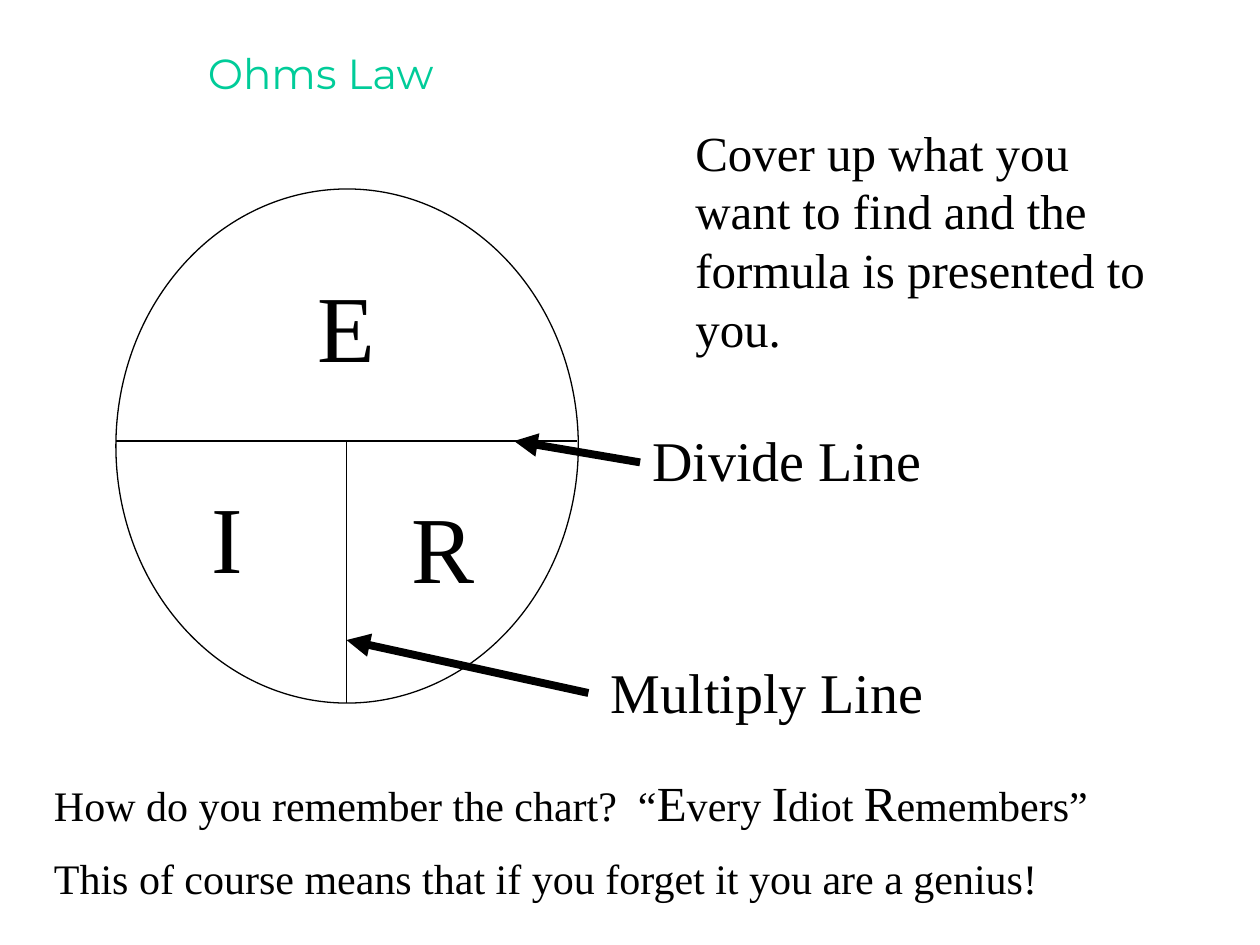
from lxml.etree import SubElement
from pptx import Presentation
from pptx.dml.color import RGBColor
from pptx.enum.shapes import MSO_CONNECTOR, MSO_SHAPE
from pptx.enum.text import MSO_AUTO_SIZE, PP_ALIGN
from pptx.oxml.ns import qn
from pptx.util import Inches, Pt

BLACK = RGBColor(0x00, 0x00, 0x00)
GREEN = RGBColor(0x00, 0xCC, 0x99)
BODY_FONT = "Times New Roman"
TITLE_FONT = "Montserrat"


def add_span(para, text, size, font=BODY_FONT, color=BLACK):
    span = para.add_run()
    span.text = text
    span.font.size = Pt(size)
    span.font.name = font
    span.font.color.rgb = color


def add_half_line_before(para):
    spacing = SubElement(para._p.get_or_add_pPr(), qn("a:spcBef"))
    SubElement(spacing, qn("a:spcPct")).set("val", "50000")


def add_title(page, text):
    box = page.shapes.add_textbox(Inches(0.42), Inches(0.33), Inches(4.25), Inches(0.67))
    box.text_frame.word_wrap = False
    para = box.text_frame.paragraphs[0]
    para.alignment = PP_ALIGN.CENTER
    add_span(para, text, 24, TITLE_FONT, GREEN)


def add_text(page, left, top, width, height, paragraphs):
    box = page.shapes.add_textbox(Inches(left), Inches(top), Inches(width), Inches(height))
    frame = box.text_frame
    frame.word_wrap = True
    frame.auto_size = MSO_AUTO_SIZE.SHAPE_TO_FIT_TEXT
    for index, spans in enumerate(paragraphs):
        para = frame.add_paragraph() if index else frame.paragraphs[0]
        add_half_line_before(para)
        for text, size in spans:
            add_span(para, text, size)


def add_circle(page, left, top, width, height):
    circle = page.shapes.add_shape(
        MSO_SHAPE.OVAL, Inches(left), Inches(top), Inches(width), Inches(height)
    )
    circle.shadow.inherit = False
    circle.fill.background()
    circle.line.color.rgb = BLACK
    circle.line.width = Pt(0.75)


def add_line(page, start, end, weight=0.75, arrow=False):
    line = page.shapes.add_connector(
        MSO_CONNECTOR.STRAIGHT, *(Inches(value) for value in (*start, *end))
    )
    line.line.color.rgb = BLACK
    line.line.width = Pt(weight)
    if arrow:
        SubElement(line.line._get_or_add_ln(), qn("a:tailEnd")).set("type", "triangle")
    SubElement(line._element.spPr, qn("a:effectLst"))


def main():
    deck = Presentation()
    deck.slide_width = Inches(10)
    deck.slide_height = Inches(7.5)
    page = deck.slides.add_slide(deck.slide_layouts[6])

    add_title(page, "Ohms Law")
    add_circle(page, 0.92, 1.5, 3.67, 4.08)
    add_line(page, (0.92, 3.5), (4.58, 3.5))
    add_line(page, (2.75, 3.5), (2.75, 5.58))

    for letter, left, top in (("E", 2.42, 2.08), ("I", 1.58, 3.75), ("R", 3.17, 3.83)):
        add_text(page, left, top, 0.92, 1, [[(letter, 54)]])

    add_text(page, 5.08, 3.33, 2.67, 0.63, [[("Divide Line", 32)]])
    add_text(page, 4.75, 5.17, 2.75, 0.63, [[("Multiply Line", 32)]])
    add_line(page, (4.67, 5.5), (2.75, 5.08), 4.5, arrow=True)
    add_line(page, (5.08, 3.67), (4.08, 3.5), 4.5, arrow=True)

    advice = "Cover up what you want to find and the formula is presented to you."
    add_text(page, 5.42, 0.92, 3.92, 1.97, [[(advice, 28)]])

    mnemonic = [
        ("How do you remember the chart?  “", 24),
        ("E", 28), ("very ", 24),
        ("I", 28), ("diot ", 24),
        ("R", 28), ("emembers”", 24),
    ]
    punchline = [("This of course means that if you forget it you are a genius!", 24)]
    add_text(page, 0.33, 6.08, 9.33, 1.17, [mnemonic, punchline])

    deck.save("out.pptx")


if __name__ == "__main__":
    main()
